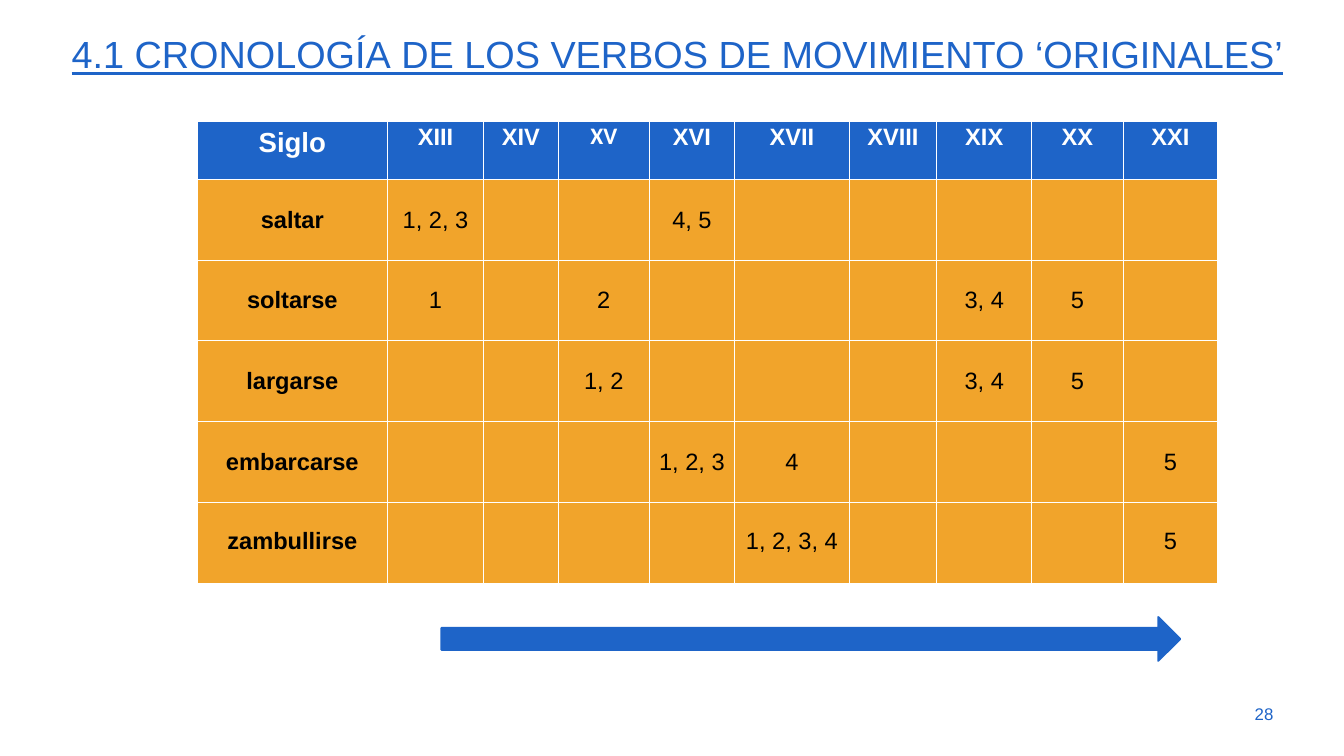
from dataclasses import dataclass

from lxml import etree
from pptx import Presentation
from pptx import util as u
from pptx.dml.color import RGBColor
from pptx.enum import shapes, text
from pptx.oxml import ns

COLOURS = {"blue": "1E64C8", "orange": "F1A42B", "white": "FFFFFF", "black": "000000"}
HEADER_HEIGHT, VERB_HEIGHT = 2.08, 2.9


@dataclass(frozen=True)
class Century:
    name: str
    width: float
    size: float = 24
    font: str = "Arial"
    top: float = 0.1


@dataclass(frozen=True)
class Verb:
    name: str
    senses: dict[str, str]
    bottom: float = 0


CENTURIES = [
    Century("Siglo", 6.83, size=28, top=0.22),
    Century("XIII", 3.43),
    Century("XIV", 2.69),
    Century("XV", 3.25, font="Calibri", top=0.02),
    Century("XVI", 3.07),
    Century("XVII", 4.09),
    Century("XVIII", 3.15),
    Century("XIX", 3.4),
    Century("XX", 3.28),
    Century("XXI", 3.38),
]
VERBS = [
    Verb("saltar", {"XIII": "1, 2, 3", "XVI": "4, 5"}),
    Verb("soltarse", {"XIII": "1", "XV": "2", "XIX": "3, 4", "XX": "5"}),
    Verb("largarse", {"XV": "1, 2", "XIX": "3, 4", "XX": "5"}),
    Verb("embarcarse", {"XVI": "1, 2, 3", "XVII": "4", "XXI": "5"}),
    Verb("zambullirse", {"XVII": "1, 2, 3, 4", "XXI": "5"}, bottom=0.14),
]


def colour(name: str) -> RGBColor:
    """Return a named colour."""
    return RGBColor.from_string(COLOURS[name])


def write(frame, words: str, size: float, shade: str, align, font: str = "Arial", bold=None):
    """Write one run in the first paragraph of a frame and return it."""
    para = frame.paragraphs[0]
    para.alignment = align
    span = para.add_run()
    span.text = words
    span.font.size, span.font.name, span.font.bold = u.Pt(size), font, bold
    span.font.color.rgb = colour(shade)
    return span


def add_borders(cell) -> None:
    """Give a cell thin white borders, placed before its fill."""
    properties = cell._tc.get_or_add_tcPr()
    for index, side in enumerate(("lnL", "lnR", "lnT", "lnB")):
        line = etree.Element(ns.qn(f"a:{side}"), w=str(u.Pt(1)))
        fill = etree.SubElement(line, ns.qn("a:solidFill"))
        etree.SubElement(fill, ns.qn("a:srgbClr"), val=COLOURS["white"])
        properties.insert(index, line)


def style_cell(cell, fill: str, anchor, top: float = 0.02, bottom: float = 0) -> None:
    """Set the fill, borders, anchor and margins of a cell."""
    cell.fill.solid()
    cell.fill.fore_color.rgb = colour(fill)
    cell.vertical_anchor = anchor
    cell.margin_left = cell.margin_right = u.Cm(0.02)
    cell.margin_top, cell.margin_bottom = u.Cm(top), u.Cm(bottom)
    add_borders(cell)


def add_title(page) -> None:
    """Place and format the title."""
    title = page.shapes.title
    title.left, title.top = u.Cm(2.31), u.Cm(0.71)
    title.width, title.height = u.Cm(45.42), u.Cm(2.39)
    frame = title.text_frame
    frame.auto_size = text.MSO_AUTO_SIZE.NONE
    frame.vertical_anchor = text.MSO_ANCHOR.MIDDLE
    words = "4.1 cronología de los verbos de movimiento ‘originales’"
    span = write(frame, words, 48, "blue", text.PP_ALIGN.LEFT)
    span.font.underline = True
    span._r.get_or_add_rPr().set("cap", "small")
    frame.paragraphs[0].line_spacing = 0.9


def add_chronology(page) -> None:
    """Add the table of verb senses by century."""
    width = sum(century.width for century in CENTURIES)
    height = HEADER_HEIGHT + VERB_HEIGHT * len(VERBS)
    table = page.shapes.add_table(
        len(VERBS) + 1, len(CENTURIES), u.Cm(7.06), u.Cm(4.34), u.Cm(width), u.Cm(height)
    ).table
    table.horz_banding = False
    table.rows[0].height = u.Cm(HEADER_HEIGHT)
    centre = text.PP_ALIGN.CENTER
    for column, century in enumerate(CENTURIES):
        table.columns[column].width = u.Cm(century.width)
        cell = table.cell(0, column)
        style_cell(cell, "blue", text.MSO_ANCHOR.TOP, top=century.top)
        write(cell.text_frame, century.name, century.size, "white", centre, century.font, True)
    for row, verb in enumerate(VERBS, start=1):
        table.rows[row].height = u.Cm(VERB_HEIGHT)
        for column, century in enumerate(CENTURIES):
            cell = table.cell(row, column)
            style_cell(cell, "orange", text.MSO_ANCHOR.MIDDLE, bottom=verb.bottom)
            words = verb.senses.get(century.name, "") if column else verb.name
            if words:
                write(cell.text_frame, words, 24, "black", centre, bold=column == 0)


def add_time_arrow(page) -> None:
    """Add the arrow that shows the course of time."""
    arrow = page.shapes.add_shape(
        shapes.MSO_SHAPE.RIGHT_ARROW, u.Cm(15.82), u.Cm(22.12), u.Cm(26.47), u.Cm(1.57)
    )
    arrow.shadow.inherit = False
    arrow.fill.solid()
    arrow.fill.fore_color.rgb = colour("blue")
    arrow.line.color.rgb = colour("blue")
    arrow.line.width = u.Pt(2)


def add_page_number(page) -> None:
    """Add the page number."""
    box = page.shapes.add_textbox(u.Cm(43.31), u.Cm(24.87), u.Cm(2.57), u.Cm(1.45))
    box.text_frame.word_wrap = True
    box.text_frame.vertical_anchor = text.MSO_ANCHOR.MIDDLE
    write(box.text_frame, "28", 17.1, "blue", text.PP_ALIGN.RIGHT)


def main() -> None:
    """Build and save the slide."""
    deck = Presentation()
    deck.slide_width, deck.slide_height = u.Cm(48.16), u.Cm(27.1)
    page = deck.slides.add_slide(deck.slide_layouts.get_by_name("Title Only"))
    add_title(page)
    add_page_number(page)
    add_chronology(page)
    add_time_arrow(page)
    deck.save("out.pptx")


if __name__ == "__main__":
    main()
